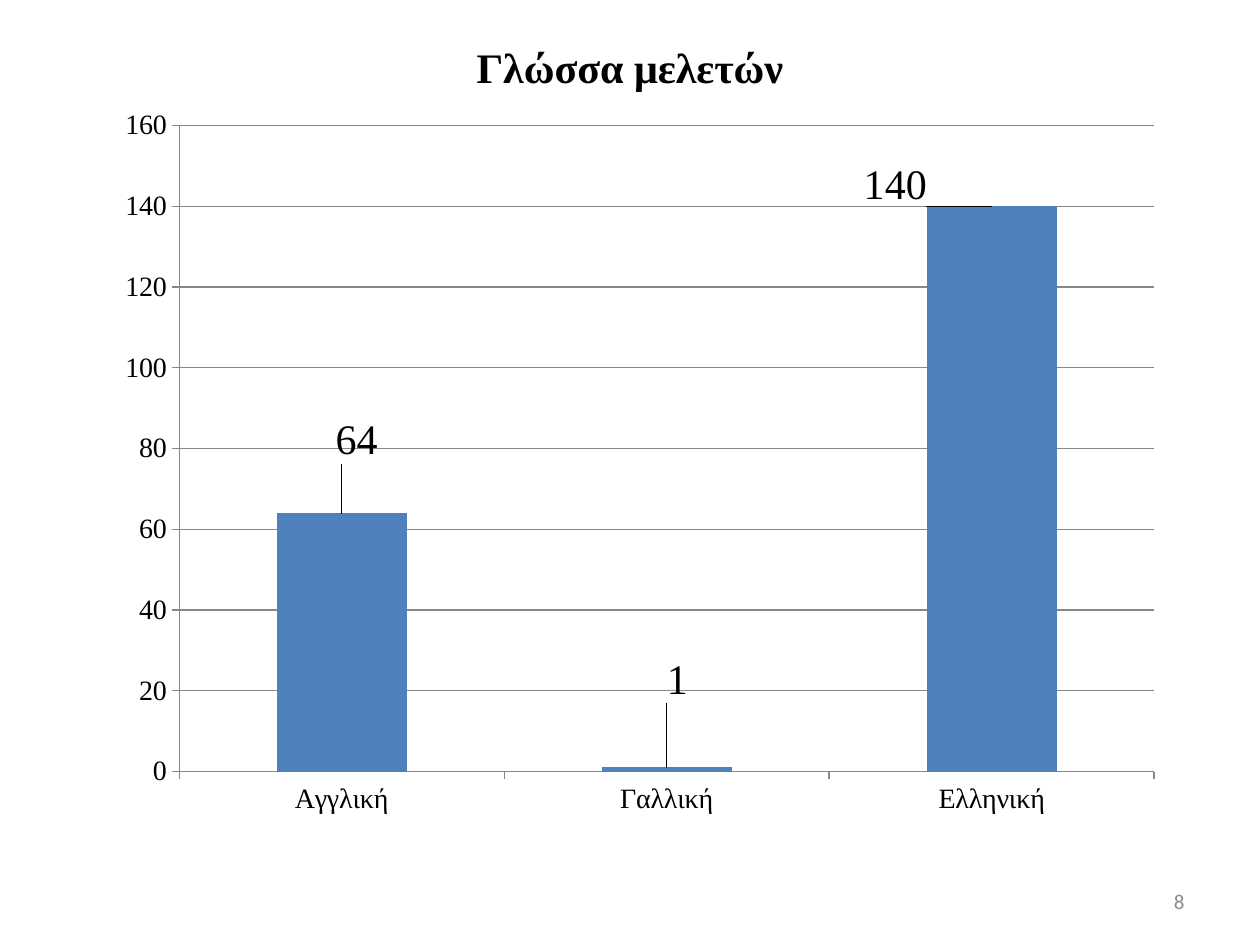
import pptx
import pptx.chart.data
import pptx.dml.color
import pptx.enum.chart
import pptx.enum.text
import pptx.oxml
import pptx.oxml.ns
import pptx.util

Cm = pptx.util.Cm
Pt = pptx.util.Pt
SERIF = "Times New Roman"
BLACK = "000000"
GREY = "878787"
STUDIES = {"Αγγλική": 64, "Γαλλική": 1, "Ελληνική": 140}
LABEL_OFFSETS = [(0.014, -0.06), (0.01, -0.08), (-0.09, 0.01)]
PLOT_AREA = (0.07, 0.04, 0.91, 0.88)


def color(hex_code):
    return pptx.dml.color.RGBColor.from_string(hex_code)


def set_font(font, size, hex_code, name, bold=False):
    font.size = Pt(size)
    font.name = name
    font.bold = bold
    font.color.rgb = color(hex_code)


def add_line_of_text(slide, box, wording, align, size, hex_code, name, bold=False):
    frame = slide.shapes.add_textbox(*map(Cm, box)).text_frame
    frame.word_wrap = True
    frame.vertical_anchor = pptx.enum.text.MSO_ANCHOR.MIDDLE
    paragraph = frame.paragraphs[0]
    paragraph.text = wording
    paragraph.alignment = align
    set_font(paragraph.font, size, hex_code, name, bold)


def manual_layout(**settings):
    entries = "".join(f'<c:{key} val="{value}"/>' for key, value in settings.items())
    return pptx.oxml.parse_xml(
        f'<c:layout {pptx.oxml.ns.nsdecls("c")}>'
        f"<c:manualLayout>{entries}</c:manualLayout></c:layout>"
    )


def style_axis(axis):
    axis.major_tick_mark = pptx.enum.chart.XL_TICK_MARK.OUTSIDE
    axis.minor_tick_mark = pptx.enum.chart.XL_TICK_MARK.NONE
    axis.format.line.color.rgb = color(GREY)
    axis.format.line.width = Pt(0.75)
    set_font(axis.tick_labels.font, 16, BLACK, SERIF)


def place_plot_area(chart):
    x, y, w, h = PLOT_AREA
    plot_area = chart._chartSpace.chart.plotArea
    for layout in plot_area.findall(pptx.oxml.ns.qn("c:layout")):
        plot_area.remove(layout)
    plot_area.insert(0, manual_layout(
        layoutTarget="inner", xMode="edge", yMode="edge", x=x, y=y, w=w, h=h))


def label_columns(chart, series):
    for index in range(len(STUDIES)):
        label = series.points[index].data_label
        set_font(label.font, 24, BLACK, SERIF)
        label.position = pptx.enum.chart.XL_LABEL_POSITION.OUTSIDE_END
    labels = chart._chartSpace.iter(pptx.oxml.ns.qn("c:dLbl"))
    for label, (x, y) in zip(list(labels), LABEL_OFFSETS):
        label.insert(1, manual_layout(x=x, y=y))


def add_language_chart(slide, box):
    studies = pptx.chart.data.CategoryChartData()
    studies.categories = list(STUDIES)
    studies.add_series("Series 1", list(STUDIES.values()))
    chart = slide.shapes.add_chart(
        pptx.enum.chart.XL_CHART_TYPE.COLUMN_CLUSTERED, *map(Cm, box), studies
    ).chart
    chart.has_title = False
    chart.has_legend = False
    set_font(chart.font, 16, BLACK, SERIF)
    place_plot_area(chart)

    for axis in (chart.category_axis, chart.value_axis):
        style_axis(axis)
    scale = chart.value_axis
    scale.minimum_scale, scale.maximum_scale, scale.major_unit = 0, 160, 20
    scale.has_major_gridlines = True
    scale.major_gridlines.format.line.color.rgb = color(GREY)
    scale.major_gridlines.format.line.width = Pt(0.75)

    columns = chart.plots[0]
    columns.gap_width = 150
    columns.vary_by_categories = False
    languages = columns.series[0]
    languages.format.fill.solid()
    languages.format.fill.fore_color.rgb = color("4F81BD")
    label_columns(chart, languages)


def main():
    deck = pptx.Presentation()
    deck.slide_width, deck.slide_height = Cm(25.4), Cm(19.05)
    slide = deck.slides.add_slide(deck.slide_layouts[6])
    align = pptx.enum.text.PP_ALIGN
    add_line_of_text(slide, (18.2, 17.66, 5.93, 1.01), "8",
                     align.RIGHT, 12, "8C8C8C", "Calibri")
    add_line_of_text(slide, (1.27, 0.77, 22.86, 1.17), "Γλώσσα μελετών",
                     align.CENTER, 24, BLACK, SERIF, bold=True)
    add_language_chart(slide, (2.1, 1.94, 21.6, 14.8))
    deck.save("out.pptx")


if __name__ == "__main__":
    main()
